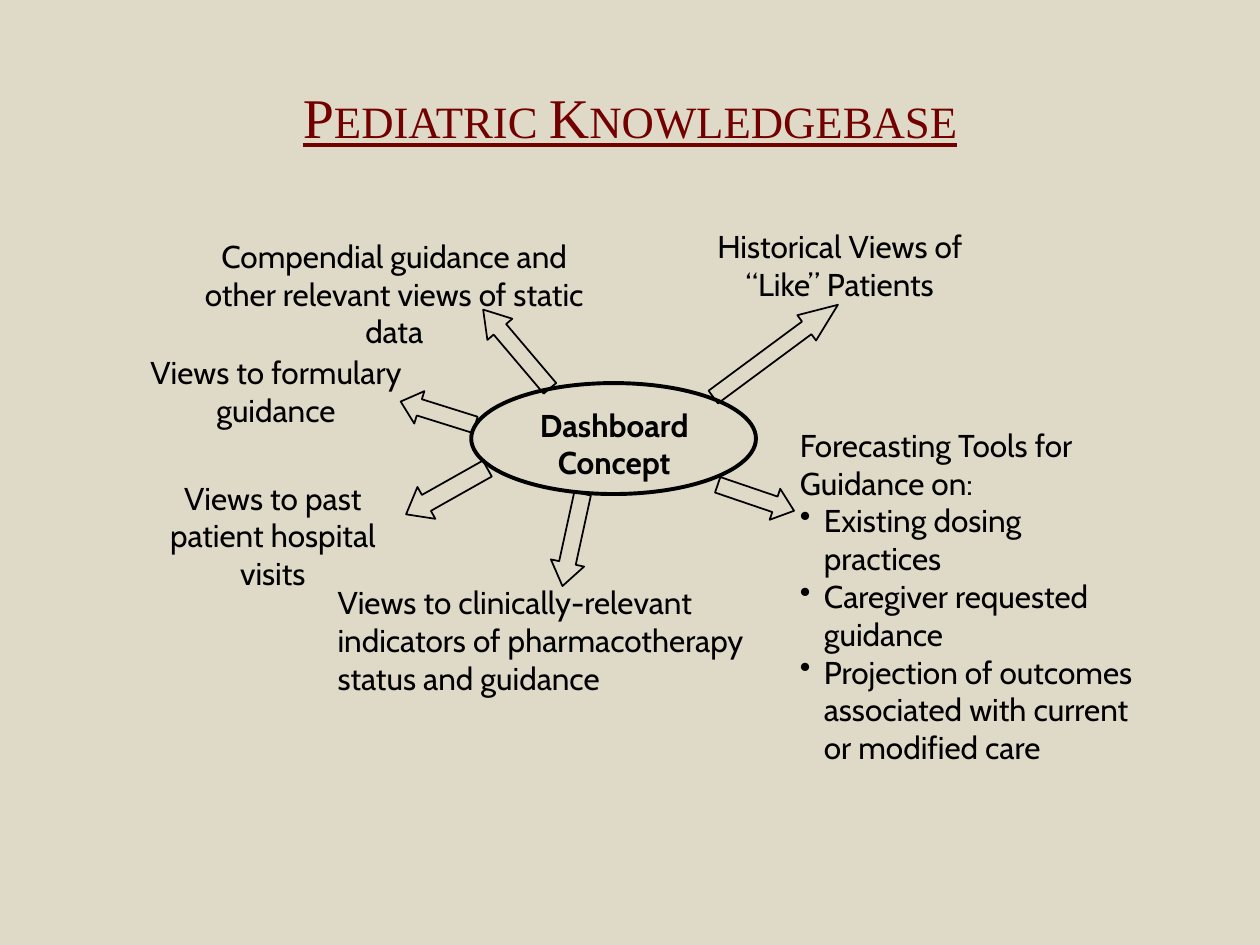
"""Build the Pediatric Knowledgebase slide: a dashboard hub with arrows to its views."""
from lxml import etree
from pptx import Presentation
from pptx.dml.color import RGBColor
from pptx.enum.shapes import MSO_SHAPE
from pptx.enum.text import MSO_ANCHOR, PP_ALIGN
from pptx.oxml.ns import qn
from pptx.util import Pt

OVAL, DOWN_ARROW = MSO_SHAPE.OVAL, MSO_SHAPE.DOWN_ARROW
LEFT, CENTER = PP_ALIGN.LEFT, PP_ALIGN.CENTER
MIDDLE = MSO_ANCHOR.MIDDLE
INK, MAROON, SAND = "000000", "730000", "DFDAC7"
HANGING = Pt(13.7)


def color(hex_string):
    return RGBColor.from_string(hex_string)


def add_outline(kind, box, weight):
    outline = slide.shapes.add_shape(kind, *map(Pt, box))
    outline.shadow.inherit = False
    outline.fill.background()
    outline.line.color.rgb = color(INK)
    outline.line.width = Pt(weight)
    return outline


prs = Presentation()
prs.slide_width, prs.slide_height = Pt(720), Pt(540)
slide = prs.slides.add_slide(prs.slide_layouts[5])
slide.background.fill.solid()
slide.background.fill.fore_color.rgb = color(SAND)

title = slide.shapes.title
title.left, title.top, title.width, title.height = map(Pt, (36, 21.6, 648, 90))
title.text_frame.text = "Pediatric Knowledgebase"
title.text_frame.vertical_anchor = MIDDLE
heading = title.text_frame.paragraphs[0]
heading.alignment = CENTER
heading_run = heading.runs[0]
heading_run.font.name = "Times New Roman"
heading_run.font.size = Pt(32)
heading_run.font.underline = True
heading_run.font.color.rgb = color(MAROON)
heading_run.font._element.set("cap", "small")

add_outline(OVAL, (269.3, 218.9, 162.7, 63.4), 2.25)

forecasting = (
    "Forecasting Tools for\nGuidance on:\nExisting dosing practices\n"
    "Caregiver requested guidance\n"
    "Projection of outcomes associated with current or modified care"
)
labels = [
    ("Compendial guidance and other relevant views of static data",
     (102.2, 131.8, 246.2, 41.8), CENTER, False),
    ("Historical Views of “Like” Patients", (401.8, 126, 156.2, 41.8), CENTER, False),
    ("Views to clinically-relevant indicators of pharmacotherapy status and guidance",
     (185.8, 329.8, 264.2, 72), LEFT, False),
    ("Views to past patient hospital visits", (72, 270, 167.8, 48.2), CENTER, False),
    (forecasting, (450, 239.8, 210.2, 180), LEFT, False),
    ("Dashboard Concept", (280.1, 228.2, 141.8, 27.4), CENTER, True),
    ("Views to formulary guidance", (77.8, 198, 159.8, 54), CENTER, False),
]
for wording, box, alignment, bold in labels:
    label = slide.shapes.add_textbox(*map(Pt, box))
    label.text_frame.word_wrap = True
    label.text_frame.text = wording
    for index, paragraph in enumerate(label.text_frame.paragraphs):
        paragraph.alignment = alignment
        font = paragraph.runs[0].font
        font.name = "Cabin"
        font.size = Pt(18)
        font.bold = bold
        font.color.rgb = color(INK)
        if wording == forecasting and index >= 2:
            properties = paragraph._p.get_or_add_pPr()
            properties.set("marL", str(HANGING))
            properties.set("indent", str(-HANGING))
            etree.SubElement(properties, qn("a:buChar")).set("char", "•")

arrows = [
    (317.5, 281.5, 19.4, 54, 12.3),
    (422.6, 261.4, 18.7, 46.1, 288.8),
    (244.8, 254.2, 20.9, 53.3, 60.6),
    (240.5, 213.8, 19.4, 44.6, 107.4),
    (285.8, 169.9, 18.7, 59, 139.7),
    (434.2, 156.2, 18, 88.6, 233.5),
]
for left, top, width, length, angle in arrows:
    arrow = add_outline(DOWN_ARROW, (left, top, width, length), 1)
    arrow.rotation = angle
    arrow.adjustments[0] = 0.5
    arrow.adjustments[1] = length / 4 / width

prs.save("out.pptx")
